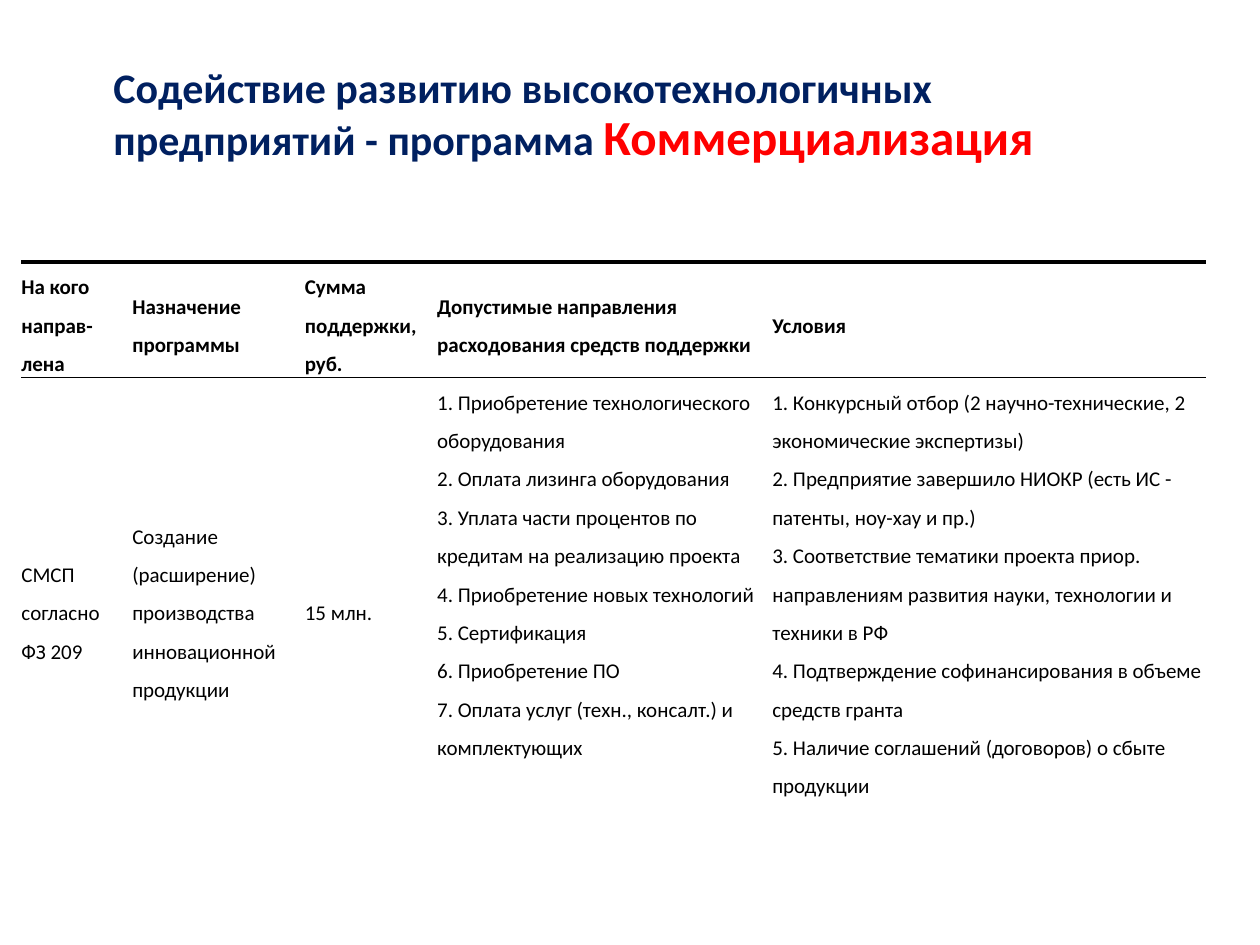
import lxml.etree
import pptx
import pptx.dml.color
import pptx.enum.text
import pptx.oxml
import pptx.oxml.ns
import pptx.util

Inches = pptx.util.Inches
MIDDLE = pptx.enum.text.MSO_ANCHOR.MIDDLE
TOP = pptx.enum.text.MSO_ANCHOR.TOP
NO_STYLE = "{2D5ABB26-0587-4C30-8999-92F81FD0307C}"


def add_text(p, text, size=12, color="000000", bold=False):
    """Add text to a paragraph, with a line break at each newline."""
    for i, line in enumerate(text.split("\n")):
        if i:
            p.add_line_break()
        r = p.add_run()
        r.text = line
        r.font.name = "Calibri"
        r.font.size = pptx.util.Pt(size)
        r.font.bold = bold
        r.font.color.rgb = pptx.dml.color.RGBColor.from_string(color)


def add_border(cell, side, width):
    """Draw a black line on side L, R, T or B; width is in points."""
    tag = pptx.oxml.ns.qn(f"a:ln{side}")
    ln = lxml.etree.SubElement(cell._tc.get_or_add_tcPr(), tag, w=str(pptx.util.Pt(width)))
    fill = lxml.etree.SubElement(ln, pptx.oxml.ns.qn("a:solidFill"))
    lxml.etree.SubElement(fill, pptx.oxml.ns.qn("a:srgbClr"), val="000000")


prs = pptx.Presentation()
prs.slide_width, prs.slide_height = Inches(10), Inches(7.5)
s = prs.slides.add_slide(prs.slide_layouts[5])

# Title
title = s.shapes.title
title.left, title.top = Inches(0.8), Inches(0.33)
title.width, title.height = Inches(8.54), Inches(1.19)
tf = title.text_frame
tf.word_wrap = True
tf.auto_size = pptx.enum.text.MSO_AUTO_SIZE.NONE
tf.vertical_anchor = MIDDLE
p = tf.paragraphs[0]
p.alignment = pptx.enum.text.PP_ALIGN.LEFT
p.line_spacing = 0.9
add_text(p, "Содействие развитию высокотехнологичных предприятий - программа ",
         size=24, color="002060", bold=True)
add_text(p, "Коммерциализация", size=28, color="FF0000", bold=True)

# Table: each cell is a list of paragraphs
headers = [
    ["На кого направ-лена"],
    ["Назначение программы"],
    ["Сумма поддержки, руб."],
    ["Допустимые направления расходования средств поддержки"],
    ["Условия"],
]
program = [
    ["СМСП согласно", "ФЗ 209"],
    ["Создание (расширение) производства инновационной продукции"],
    ["15 млн."],
    ["1. Приобретение технологического оборудования\n"
     "2. Оплата лизинга оборудования\n"
     "3. Уплата части процентов по кредитам на реализацию проекта\n"
     "4. Приобретение новых технологий\n"
     "5. Сертификация\n"
     "6. Приобретение ПО\n"
     "7. Оплата услуг (техн., консалт.) и комплектующих"],
    ["1. Конкурсный отбор (2 научно-технические, 2 экономические экспертизы)\n"
     "2. Предприятие завершило НИОКР (есть ИС - патенты, ноу-хау и пр.)\n"
     "3. Соответствие тематики проекта приор. направлениям развития науки, "
     "технологии и техники в РФ\n"
     "4. Подтверждение софинансирования в объеме средств гранта\n"
     "5. Наличие соглашений (договоров) о сбыте продукции"],
]
widths = [0.88, 1.37, 1.05, 2.66, 3.44]
heights = [0.79, 3.65]
borders = [[("T", 2.25), ("B", 1)], [("T", 1)]]

frame = s.shapes.add_table(len(heights), len(widths), Inches(0.17), Inches(2.08),
                           Inches(sum(widths)), Inches(sum(heights)))
table = frame.table
table.horz_banding = False
table._tbl.tblPr.find(pptx.oxml.ns.qn("a:tableStyleId")).text = NO_STYLE
for column, width in zip(table.columns, widths):
    column.width = Inches(width)

for i, texts in enumerate([headers, program]):
    table.rows[i].height = Inches(heights[i])
    for j, paragraphs in enumerate(texts):
        cell = table.cell(i, j)
        cell.margin_left = cell.margin_right = cell.margin_top = cell.margin_bottom = 0
        cell.vertical_anchor = TOP if i == 1 and j >= 3 else MIDDLE
        for side, width in borders[i]:
            add_border(cell, side, width)
        cell.fill.solid()
        cell.fill.fore_color.rgb = pptx.dml.color.RGBColor.from_string("FFFFFF")
        tf = cell.text_frame
        for k, text in enumerate(paragraphs):
            p = tf.add_paragraph() if k else tf.paragraphs[0]
            p.line_spacing = 1.5
            add_text(p, text, bold=i == 0)

prs.save("out.pptx")
